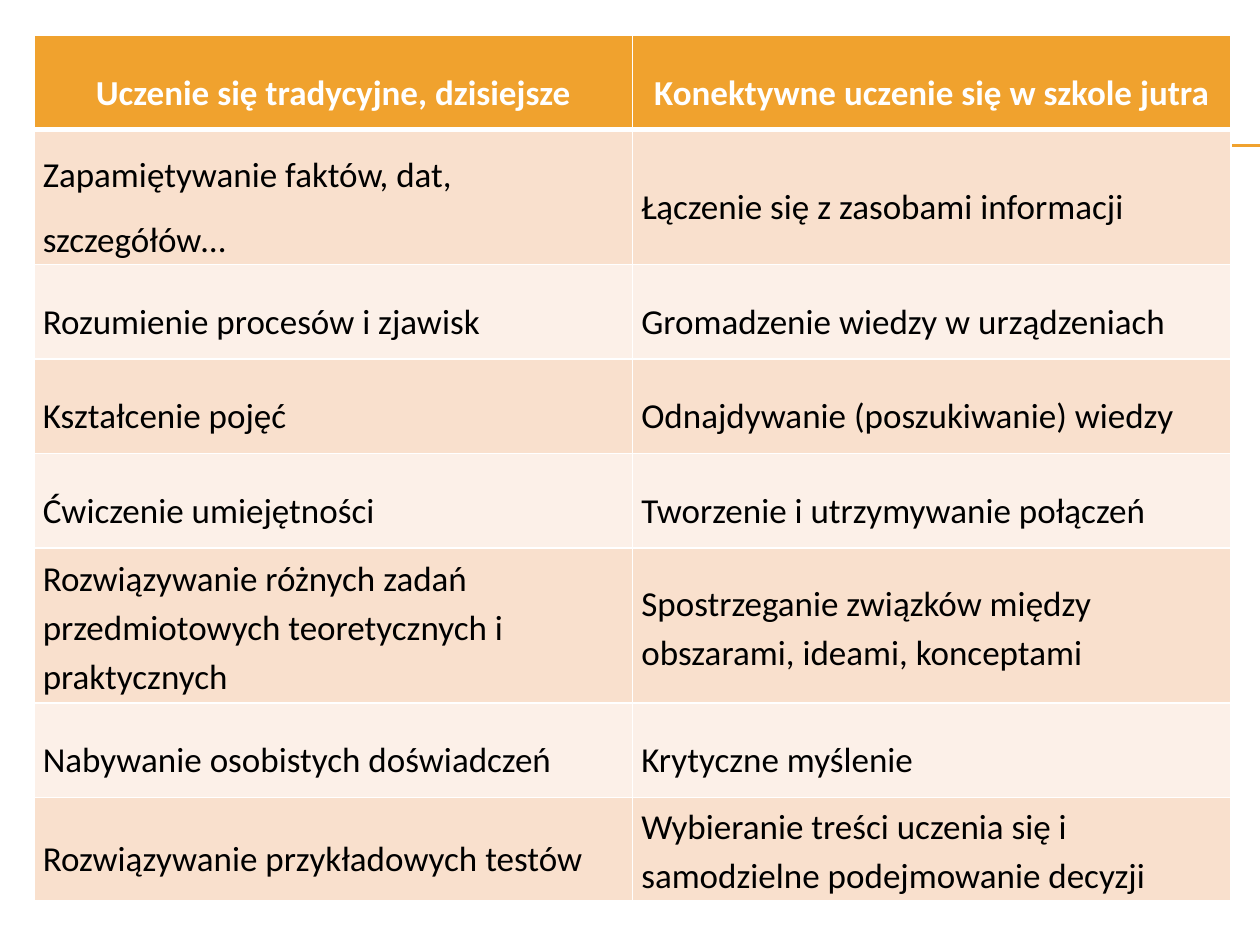
from typing import NamedTuple

from lxml import etree
from pptx import Presentation
from pptx.dml.color import RGBColor
from pptx.enum import shapes, text
from pptx.oxml import ns
from pptx.util import Inches, Pt

COLORS = {
    "accent": "F0A22E",
    "band_dark": "F9E0CD",
    "band_light": "FCF0E8",
    "white": "FFFFFF",
    "black": "000000",
}
WIDE, TIGHT = 1.5, 1.15


class Entry(NamedTuple):
    wording: str
    spacing: float = WIDE


class Comparison(NamedTuple):
    traditional: Entry
    connective: Entry
    height: float = 0.75


COMPARISONS = [
    Comparison(Entry("Uczenie się tradycyjne, dzisiejsze"),
               Entry("Konektywne uczenie się w szkole jutra")),
    Comparison(Entry("Zapamiętywanie faktów, dat, szczegółów…"),
               Entry("Łączenie się z zasobami informacji"), 1.07),
    Comparison(Entry("Rozumienie procesów i zjawisk"),
               Entry("Gromadzenie wiedzy w urządzeniach")),
    Comparison(Entry("Kształcenie pojęć"),
               Entry("Odnajdywanie (poszukiwanie) wiedzy")),
    Comparison(Entry("Ćwiczenie umiejętności"),
               Entry("Tworzenie i utrzymywanie połączeń")),
    Comparison(Entry("Rozwiązywanie różnych zadań przedmiotowych teoretycznych i praktycznych", TIGHT),
               Entry("Spostrzeganie związków między obszarami, ideami, konceptami", TIGHT), 1.23),
    Comparison(Entry("Nabywanie osobistych doświadczeń"),
               Entry("Krytyczne myślenie")),
    Comparison(Entry("Rozwiązywanie przykładowych testów"),
               Entry("Wybieranie treści uczenia się i samodzielne podejmowanie decyzji", TIGHT), 0.82),
]


def color(name: str) -> RGBColor:
    return RGBColor.from_string(COLORS[name])


def draw_rule(slide, y: float) -> None:
    rule = slide.shapes.add_connector(
        shapes.MSO_CONNECTOR.STRAIGHT, Inches(0.56), Inches(y), Inches(10), Inches(y))
    rule.line.color.rgb = color("accent")
    rule.line.width = Pt(0.75)
    etree.SubElement(rule._element.spPr, ns.qn("a:effectLst"))


def set_borders(cell, top: float = 1, bottom: float = 1) -> None:
    """Add white cell borders; call before setting the fill, which must follow them."""
    properties = cell._tc.get_or_add_tcPr()
    for side, width in (("L", 1), ("R", 1), ("T", top), ("B", bottom)):
        border = etree.SubElement(properties, ns.qn(f"a:ln{side}"), w=str(Pt(width)))
        fill = etree.SubElement(border, ns.qn("a:solidFill"))
        etree.SubElement(fill, ns.qn("a:srgbClr"), val=COLORS["white"])


def fill_cell(cell, entry: Entry, row: int) -> None:
    is_header = row == 0
    set_borders(cell, top=3 if row == 1 else 1, bottom=3 if is_header else 1)
    band = "band_dark" if row % 2 else "band_light"
    cell.fill.solid()
    cell.fill.fore_color.rgb = color("accent" if is_header else band)
    cell.vertical_anchor = text.MSO_ANCHOR.MIDDLE
    cell.margin_left = cell.margin_right = Inches(0.07)
    cell.margin_top = cell.margin_bottom = 0

    para = cell.text_frame.paragraphs[0]
    para.text = entry.wording
    para.alignment = text.PP_ALIGN.CENTER if is_header else text.PP_ALIGN.LEFT
    para.line_spacing = entry.spacing
    para.space_after = Pt(10)
    para.font.name = "Calibri"
    para.font.size = Pt(20)
    para.font.bold = is_header
    para.font.color.rgb = color("white" if is_header else "black")


def draw_table(slide, comparisons: list[Comparison]) -> None:
    height = sum(comparison.height for comparison in comparisons)
    table = slide.shapes.add_table(
        len(comparisons), 2, Inches(0.27), Inches(0.28), Inches(9.5), Inches(height)).table
    for row, comparison in enumerate(comparisons):
        table.rows[row].height = Inches(comparison.height)
        for column, entry in enumerate((comparison.traditional, comparison.connective)):
            fill_cell(table.cell(row, column), entry, row)


def main() -> None:
    deck = Presentation()
    deck.slide_width, deck.slide_height = Inches(10), Inches(7.5)
    slide = deck.slides.add_slide(deck.slide_layouts[6])
    for y in (1.15, 1.16):
        draw_rule(slide, y)
    draw_table(slide, COMPARISONS)
    deck.save("out.pptx")


if __name__ == "__main__":
    main()
